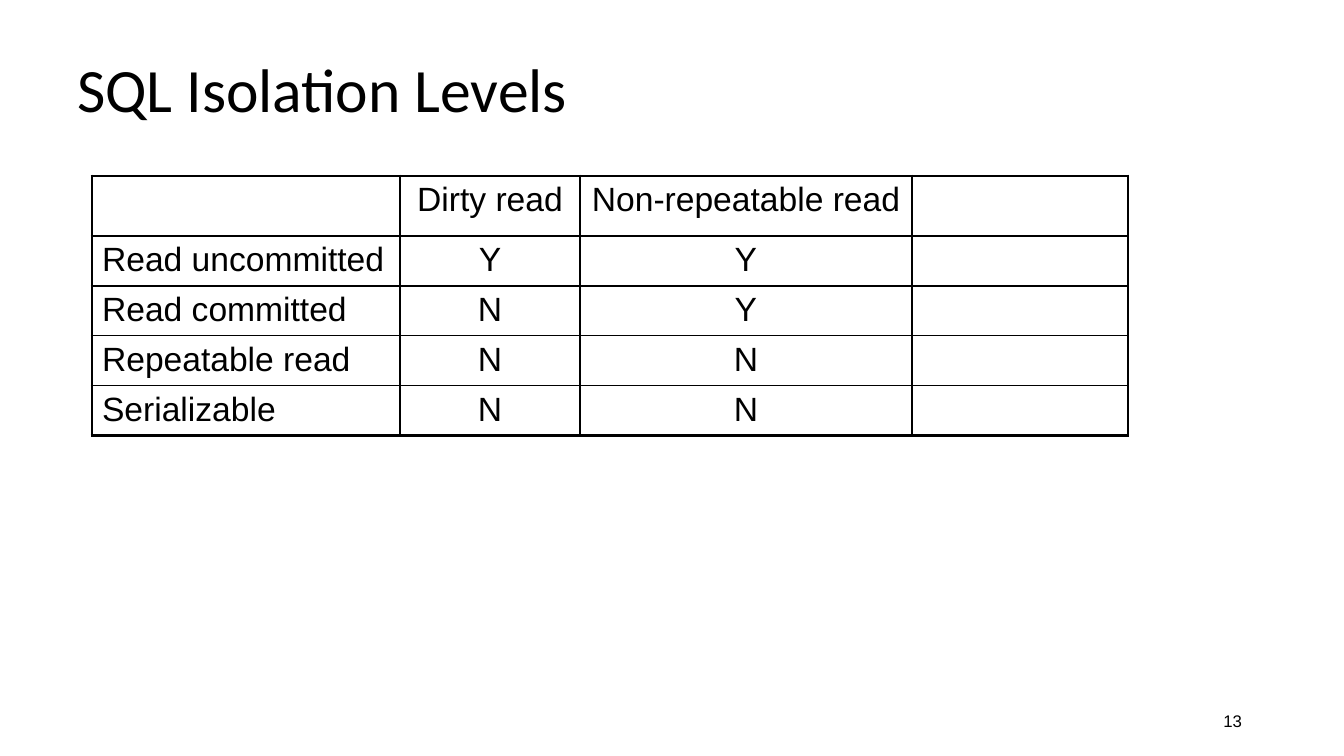
"""Build the SQL isolation levels slide."""
from lxml.etree import SubElement
from pptx import Presentation
from pptx.dml.color import RGBColor
from pptx.enum.text import MSO_ANCHOR, PP_ALIGN
from pptx.oxml.ns import qn
from pptx.util import Pt

TITLE = "SQL Isolation Levels"
PAGE_NUMBER = "13"
LEVELS = [
    ("", "Dirty read", "Non-repeatable read", ""),
    ("Read uncommitted", "Y", "Y", ""),
    ("Read committed", "N", "Y", ""),
    ("Repeatable read", "N", "N", ""),
    ("Serializable", "N", "N", ""),
]
COLORS = {"ink": "000000", "paper": "FFFFFF"}
SLIDE_SIZE = (1344, 756)
TITLE_BOX = (67, 30, 1210, 126)
NUMBER_BOX = (950, 701, 302, 40)
TABLE_ORIGIN = (92, 176)
COLUMN_WIDTHS = (308, 180, 332, 216)
ROW_HEIGHTS = (60, 50, 50, 50, 50)
INNER_LINE, OUTER_LINE = 1, 2.25
EMU_PER_PX = 914400 / 100.8


def px(length):
    return round(length * EMU_PER_PX)


def write(frame, text, size, font="Arial", align=PP_ALIGN.LEFT,
          anchor=MSO_ANCHOR.MIDDLE, spacing=None):
    frame.word_wrap = True
    frame.vertical_anchor = anchor
    para = frame.paragraphs[0]
    para.alignment = align
    para.line_spacing = spacing
    span = para.add_run()
    span.text = text
    span.font.name = font
    span.font.size = Pt(size)
    span.font.color.rgb = RGBColor.from_string(COLORS["ink"])


def draw_borders(cell, widths):
    properties = cell._tc.get_or_add_tcPr()
    for side, width in widths.items():
        line = SubElement(properties, qn(f"a:ln{side}"), w=str(Pt(width)))
        fill = SubElement(line, qn("a:solidFill"))
        SubElement(fill, qn("a:srgbClr"), val=COLORS["ink"])


def add_level_table(page):
    size = (sum(COLUMN_WIDTHS), sum(ROW_HEIGHTS))
    last_row, last_column = len(LEVELS) - 1, len(COLUMN_WIDTHS) - 1
    table = page.shapes.add_table(
        len(LEVELS), len(COLUMN_WIDTHS), *map(px, TABLE_ORIGIN + size)).table
    table.first_row = table.horz_banding = False
    for column, width in zip(table.columns, COLUMN_WIDTHS):
        column.width = px(width)
    for row, height in zip(table.rows, ROW_HEIGHTS):
        row.height = px(height)
    for r, level in enumerate(LEVELS):
        for c, text in enumerate(level):
            cell = table.cell(r, c)
            outer = {"L": c == 0, "R": c == last_column,
                     "T": r == 0, "B": r == last_row}
            draw_borders(cell, {side: OUTER_LINE if edge else INNER_LINE
                                for side, edge in outer.items()})
            cell.fill.background()
            if text:
                write(cell.text_frame, text, 24, anchor=MSO_ANCHOR.TOP,
                      align=PP_ALIGN.CENTER if c else PP_ALIGN.LEFT)


def main():
    deck = Presentation()
    deck.slide_width, deck.slide_height = map(px, SLIDE_SIZE)
    page = deck.slides.add_slide(deck.slide_layouts[5])
    page.background.fill.solid()
    page.background.fill.fore_color.rgb = RGBColor.from_string(COLORS["paper"])

    title = page.shapes.title
    title.left, title.top, title.width, title.height = map(px, TITLE_BOX)
    write(title.text_frame, TITLE, 44, font="Calibri", spacing=0.9)

    add_level_table(page)

    number = page.shapes.add_textbox(*map(px, NUMBER_BOX))
    write(number.text_frame, PAGE_NUMBER, 12, align=PP_ALIGN.RIGHT)
    deck.save("out.pptx")


if __name__ == "__main__":
    main()
